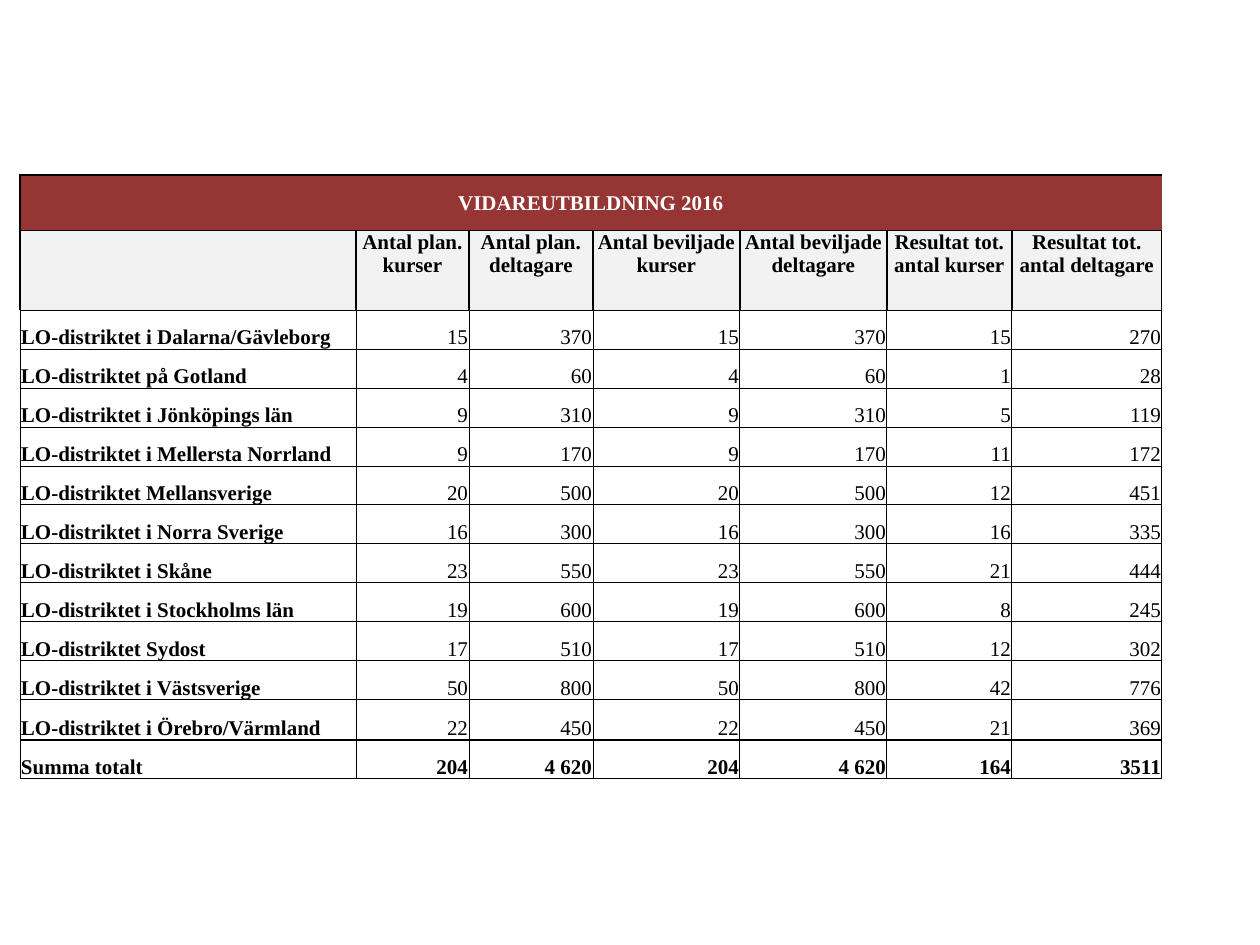
from lxml import etree
from pptx import Presentation
from pptx.dml.color import RGBColor
from pptx.enum.text import MSO_ANCHOR, PP_ALIGN
from pptx.oxml.ns import qn
from pptx.util import Emu, Pt

PX = 914400 // 126
TOP, MIDDLE, BOTTOM = MSO_ANCHOR.TOP, MSO_ANCHOR.MIDDLE, MSO_ANCHOR.BOTTOM
LEFT, CENTER, RIGHT = PP_ALIGN.LEFT, PP_ALIGN.CENTER, PP_ALIGN.RIGHT

THEME = {
    "font": "Times New Roman",
    "size": Pt(12),
    "text": RGBColor.from_string("000000"),
    "title_text": RGBColor.from_string("FFFFFF"),
    "title_fill": RGBColor.from_string("963634"),
    "header_fill": RGBColor.from_string("F2F2F2"),
    "border": "000000",
    "thin": Pt(0.5),
    "thick": Pt(1),
}
THIN, THICK = THEME["thin"], THEME["thick"]

TABLE_LEFT, TABLE_TOP = 20, 175
COLUMN_WIDTHS = [336, 113, 124, 147, 147, 125, 150]
ROW_HEIGHTS = [55, 80] + [39] * 10 + [40, 39]

ROWS = [
    ["VIDAREUTBILDNING 2016"] + [""] * 6,
    ["", "Antal plan. kurser", "Antal plan. deltagare", "Antal beviljade kurser",
     "Antal beviljade deltagare", "Resultat tot. antal kurser", "Resultat tot. antal deltagare"],
    ["LO-distriktet i Dalarna/Gävleborg", "15", "370", "15", "370", "15", "270"],
    ["LO-distriktet på Gotland", "4", "60", "4", "60", "1", "28"],
    ["LO-distriktet i Jönköpings län", "9", "310", "9", "310", "5", "119"],
    ["LO-distriktet i Mellersta Norrland", "9", "170", "9", "170", "11", "172"],
    ["LO-distriktet Mellansverige", "20", "500", "20", "500", "12", "451"],
    ["LO-distriktet i Norra Sverige", "16", "300", "16", "300", "16", "335"],
    ["LO-distriktet i Skåne", "23", "550", "23", "550", "21", "444"],
    ["LO-distriktet i Stockholms län", "19", "600", "19", "600", "8", "245"],
    ["LO-distriktet Sydost", "17", "510", "17", "510", "12", "302"],
    ["LO-distriktet i Västsverige", "50", "800", "50", "800", "42", "776"],
    ["LO-distriktet i Örebro/Värmland", "22", "450", "22", "450", "21", "369"],
    ["Summa totalt", "204", "4 620", "204", "4 620", "164", "3511"],
]
TITLE_ROW, HEADER_ROW = 0, 1
TOTAL_ROW, LAST_COLUMN = len(ROWS) - 1, len(COLUMN_WIDTHS) - 1


def set_borders(cell, widths):
    """Draw the left, right, top and bottom borders; a width of None hides one."""
    properties = cell._tc.get_or_add_tcPr()
    for side, width in zip("LRTB", widths):
        line = etree.SubElement(properties, qn(f"a:ln{side}"))
        if width is None:
            etree.SubElement(line, qn("a:noFill"))
            continue
        line.set("w", str(int(width)))
        fill = etree.SubElement(line, qn("a:solidFill"))
        etree.SubElement(fill, qn("a:srgbClr"), val=THEME["border"])


def format_for(row, column):
    """Return anchor, alignment, bold, text colour, fill and border widths."""
    if row == TITLE_ROW:
        left = THICK if column == 0 else None
        return (MIDDLE, CENTER, True, THEME["title_text"], THEME["title_fill"],
                (left, None, THICK, THIN))
    if row == HEADER_ROW:
        right = THIN if column == LAST_COLUMN else THICK
        return (TOP, CENTER, True, THEME["text"], THEME["header_fill"],
                (THICK, right, THIN, THIN))
    top = THICK if row == TOTAL_ROW else THIN
    bottom = THICK if row == TOTAL_ROW - 1 else THIN
    return (BOTTOM, LEFT if column == 0 else RIGHT, column == 0 or row == TOTAL_ROW,
            THEME["text"], None, (THIN, THIN, top, bottom))


presentation = Presentation()
presentation.slide_width = Emu(1260 * PX)
presentation.slide_height = Emu(945 * PX)
slide = presentation.slides.add_slide(presentation.slide_layouts[6])

table = slide.shapes.add_table(
    len(ROWS), len(COLUMN_WIDTHS), TABLE_LEFT * PX, TABLE_TOP * PX,
    sum(COLUMN_WIDTHS) * PX, sum(ROW_HEIGHTS) * PX).table
table.first_row = False
table.horz_banding = False
for column, width in zip(table.columns, COLUMN_WIDTHS):
    column.width = Emu(width * PX)
for row, height in zip(table.rows, ROW_HEIGHTS):
    row.height = Emu(height * PX)
table.cell(TITLE_ROW, 0).merge(table.cell(TITLE_ROW, LAST_COLUMN))

for row_index, values in enumerate(ROWS):
    for column_index, value in enumerate(values):
        cell = table.cell(row_index, column_index)
        anchor, alignment, bold, color, fill, borders = format_for(row_index, column_index)
        set_borders(cell, borders)
        if fill is None:
            cell.fill.background()
        else:
            cell.fill.solid()
            cell.fill.fore_color.rgb = fill
        cell_format = {"vertical_anchor": anchor, "margin_left": PX, "margin_right": PX,
                       "margin_top": PX, "margin_bottom": 0}
        for name, setting in cell_format.items():
            setattr(cell, name, setting)
        if not value:
            continue
        paragraph = cell.text_frame.paragraphs[0]
        paragraph.alignment = alignment
        run = paragraph.add_run()
        run.text = value
        for name, setting in {"name": THEME["font"], "size": THEME["size"], "bold": bold}.items():
            setattr(run.font, name, setting)
        run.font.color.rgb = color

presentation.save("out.pptx")
